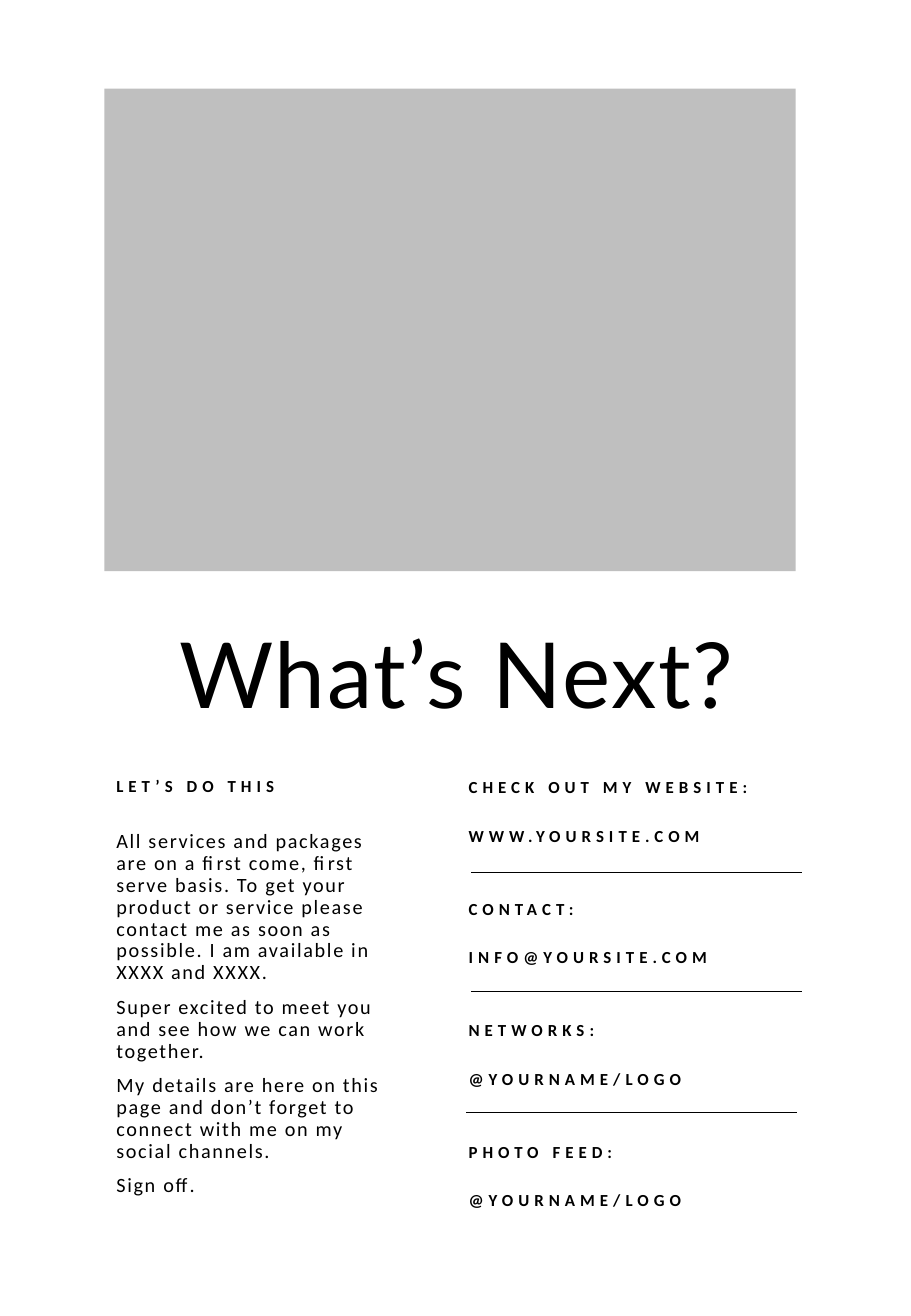
"""Build the "What's Next?" closing page with contact details."""
from lxml import etree
from pptx import Presentation
from pptx.dml.color import RGBColor
from pptx.enum import shapes, text
from pptx.oxml import ns
from pptx.util import Pt

PAGE = (540, 779.76)
BLACK, GREY = "000000", "BFBFBF"
TITLE = "What’s Next?"
SUBHEAD = "LET’S DO THIS"
MESSAGE = [
    "All services and packages are on a first come, first serve basis. "
    "To get your product or service please contact me as soon as possible. "
    "I am available in XXXX and XXXX.",
    "Super excited to meet you and see how we can work together.",
    "My details are here on this page and don’t forget to connect with me "
    "on my social channels.",
    "Sign off.",
]
CONTACTS = [
    ("CHECK OUT MY WEBSITE:", "WWW.YOURSITE.COM"),
    ("CONTACT:", "INFO@YOURSITE.COM"),
    ("NETWORKS:", "@YOURNAME/LOGO"),
    ("PHOTO FEED:", "@YOURNAME/LOGO"),
]
PHOTO_BOX = (61.92, 52.56, 409.68, 285.84)
TITLE_BOX = (38.88, 362.16, 463.68, 72.72)
SUBHEAD_BOX = (61.92, 455.76, 112.32, 19.44)
MESSAGE_BOX = (61.92, 488.88, 170.64, 236.88)
CONTACT_BOX = (270.72, 454.32, 185.04, 305.28)
DIVIDERS = [(279.36, 516.96), (279.36, 587.52), (276.48, 658.8)]
DIVIDER_WIDTH = 195.84
CONTACT_LINE = 14.4


def color(hex_code):
    return RGBColor.from_string(hex_code)


def place(shape, box):
    shape.left, shape.top, shape.width, shape.height = map(Pt, box)


def write(shape, lines, font, size, tracking, bold=False, spacing=1.0,
          gaps=(0,), align=text.PP_ALIGN.LEFT, wrap=True):
    frame = shape.text_frame
    frame.text = "\n".join(lines)
    frame.word_wrap = wrap
    frame.auto_size = text.MSO_AUTO_SIZE.NONE
    frame.vertical_anchor = text.MSO_ANCHOR.TOP
    for index, paragraph in enumerate(frame.paragraphs):
        paragraph.alignment = align
        paragraph.line_spacing = spacing
        paragraph.space_before = Pt(gaps[index % len(gaps)] if index else 0)
        for run in paragraph.runs:
            run.font.name, run.font.size, run.font.bold = font, Pt(size), bold
            run.font.color.rgb = color(BLACK)
            run._r.get_or_add_rPr().set("spc", str(tracking * 100))


def add_text(slide, box, lines, **style):
    write(slide.shapes.add_textbox(*map(Pt, box)), lines, "Calibri", **style)


def add_divider(slide, left, top):
    divider = slide.shapes.add_connector(
        shapes.MSO_CONNECTOR.STRAIGHT,
        Pt(left), Pt(top), Pt(left + DIVIDER_WIDTH), Pt(top))
    divider.line.color.rgb = color(BLACK)
    divider.line.width = Pt(0.25)
    etree.SubElement(divider._element.spPr, ns.qn("a:effectLst"))


def main():
    deck = Presentation()
    deck.slide_width, deck.slide_height = map(Pt, PAGE)
    slide = deck.slides.add_slide(deck.slide_layouts[5])

    title = slide.shapes.title
    place(title, TITLE_BOX)
    write(title, [TITLE], "Lato", 54, 1, align=text.PP_ALIGN.CENTER)

    add_text(slide, MESSAGE_BOX, MESSAGE, size=12, tracking=1,
             spacing=0.9, gaps=(7.5,))
    add_text(slide, SUBHEAD_BOX, [SUBHEAD], size=10, tracking=3,
             bold=True, wrap=False)
    contact_lines = [line for contact in CONTACTS for line in contact]
    add_text(slide, CONTACT_BOX, contact_lines, size=10, tracking=3,
             bold=True, spacing=1.2, wrap=False,
             gaps=(2 * CONTACT_LINE, CONTACT_LINE))

    for left, top in DIVIDERS:
        add_divider(slide, left, top)

    photo = slide.shapes.add_shape(
        shapes.MSO_SHAPE.RECTANGLE, *map(Pt, PHOTO_BOX))
    photo.shadow.inherit = False
    photo.fill.solid()
    photo.fill.fore_color.rgb = color(GREY)
    photo.line.fill.background()

    deck.save("out.pptx")


if __name__ == "__main__":
    main()
